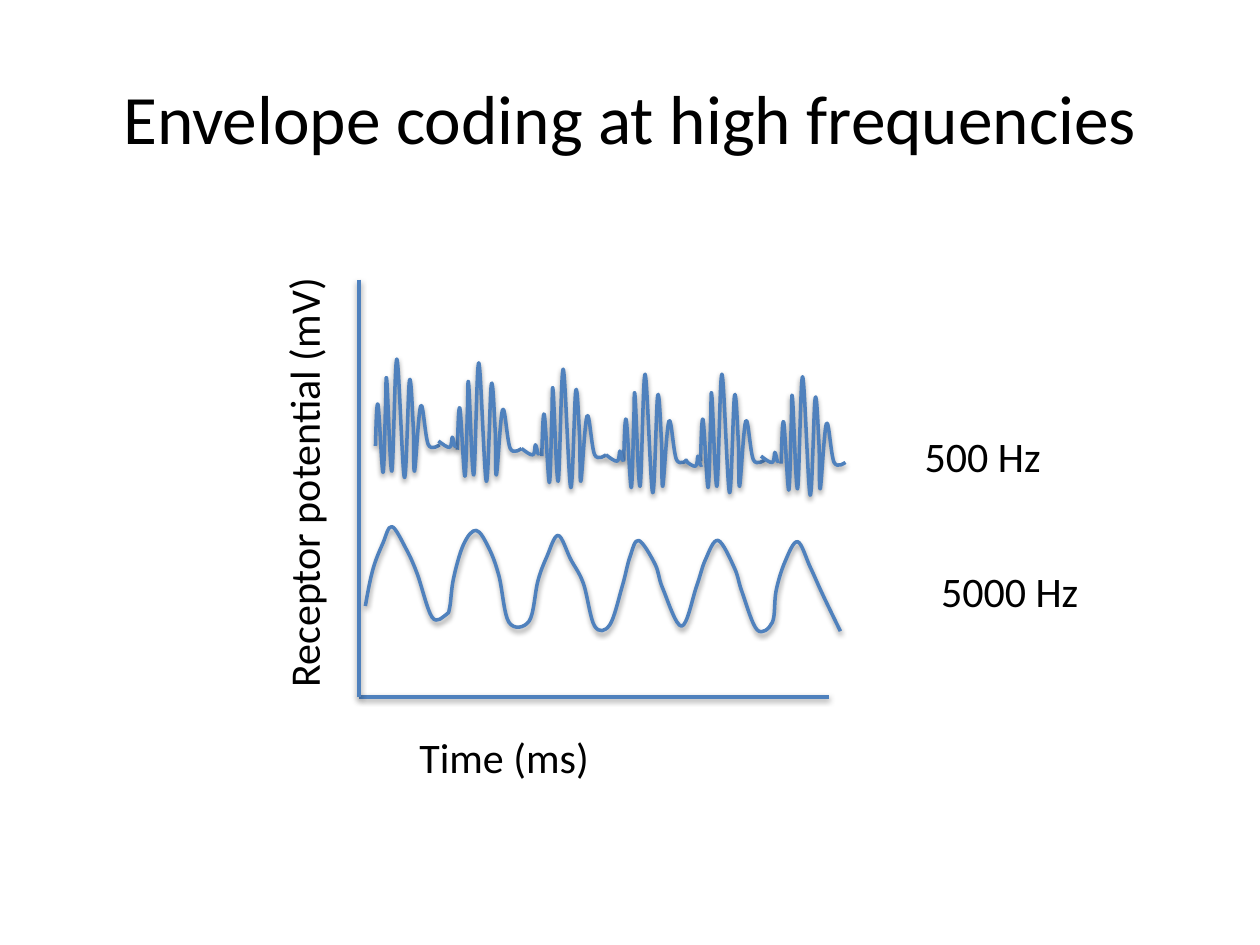
from dataclasses import dataclass

from lxml import etree
from pptx import Presentation
from pptx.dml.color import RGBColor
from pptx.enum.shapes import MSO_CONNECTOR
from pptx.enum.text import MSO_ANCHOR, MSO_AUTO_SIZE, PP_ALIGN
from pptx.oxml.ns import qn
from pptx.util import Inches, Pt

STRAIGHT = MSO_CONNECTOR.STRAIGHT
CENTER, MIDDLE = PP_ALIGN.CENTER, MSO_ANCHOR.MIDDLE
FIT_SHAPE, NO_FIT = MSO_AUTO_SIZE.SHAPE_TO_FIT_TEXT, MSO_AUTO_SIZE.NONE
TITLE_ONLY = 5


@dataclass(frozen=True)
class Theme:
    font: str = "Calibri"
    text: RGBColor = RGBColor(0, 0, 0)
    trace: RGBColor = RGBColor(0x4F, 0x81, 0xBD)
    title_size: float = 39.6
    label_size: float = 24
    line_width: float = 2


THEME = Theme()
TITLE_BOX = (0.5, 0.3, 9, 1.25)
PLOT_BOX = (2.85, 2.22, 3.73, 3.31)

# Curve knots in hundredths of an inch from the start of each curve
BURST = [(0, 0), (2, -33), (6, 21), (8, -32), (9, -52), (13, 20), (17, -69),
         (23, 25), (27, -52), (30, -16), (31, 20), (36, -32), (42, -1), (51, -1)]
RIPPLE = [(0, 0), (9, 5), (11, -3), (13, 4), (14, 4)]
WAVE = [(0, 0), (6, -29), (14, -50), (21, -63), (32, -46), (41, -26), (53, 9),
        (64, 7), (67, 1), (70, -22), (78, -49), (88, -60), (98, -46), (106, -24),
        (114, 13), (130, 12), (137, -20), (144, -39), (153, -56), (163, -37),
        (173, -18), (182, 16), (194, 15), (204, -16), (210, -39), (217, -52),
        (230, -33), (236, -14), (251, 16), (263, -16), (270, -37), (280, -52),
        (293, -30), (299, -11), (311, 19), (323, 13), (326, -12), (333, -35),
        (343, -51), (353, -31), (363, -9), (377, 20)]

# Curve starts in inches from the top left of the plot
TRACES = [
    (BURST, [(0.13, 1.32), (0.78, 1.35), (1.45, 1.40),
             (2.10, 1.44), (2.71, 1.44), (3.35, 1.46)]),
    (RIPPLE, [(0.63, 1.28), (1.29, 1.34), (1.96, 1.39), (2.58, 1.43), (3.19, 1.40)]),
    (WAVE, [(0.05, 2.59)]),
]

# Text, offset from the plot, size, rotation
LABELS = [
    ("Time (ms)", (0.38, 3.54), (1.6, 0.5), 0),
    ("Receptor potential (mV)", (-2.19, 1.34), (3.49, 0.5), 270),
    ("500 Hz", (4.39, 1.15), (1.13, 0.5), 0),
    ("5000 Hz", (4.52, 2.22), (1.35, 0.5), 0),
]


def format_text(p, text, size):
    r = p.add_run()
    r.text = text
    for name, value in {"name": THEME.font, "size": Pt(size)}.items():
        setattr(r.font, name, value)
    r.font.color.rgb = THEME.text


def style_line(sp):
    """Give a curve or an axis its stroke and soft shadow."""
    sp.line.color.rgb = THEME.trace
    sp.line.width = Pt(THEME.line_width)
    effects = etree.SubElement(sp._element.spPr, qn("a:effectLst"))
    shadow = etree.SubElement(effects, qn("a:outerShdw"), blurRad="40000",
                              dist="20000", dir="5400000", rotWithShape="0")
    black = etree.SubElement(shadow, qn("a:srgbClr"), val="000000")
    etree.SubElement(black, qn("a:alpha"), val="38000")


def smooth(sp):
    """Turn the straight segments of a freeform into a spline through its knots."""
    segments = list(sp._element.iter(qn("a:lnTo")))
    knots = [(int(pt.get("x")), int(pt.get("y")))
             for pt in sp._element.iter(qn("a:pt"))]
    last = len(knots) - 1

    def tangent(i):
        return [(b - a) / 6 for a, b in zip(knots[i - 1], knots[i + 1])]

    for i, segment in enumerate(segments):
        start, end = knots[i], knots[i + 1]
        arrive = end
        if i + 1 < last:
            arrive = [k - t for k, t in zip(end, tangent(i + 1))]
        if i:
            leave = [k + t for k, t in zip(start, tangent(i))]
        else:
            leave = [(a + b) / 2 for a, b in zip(start, arrive)]
        curve = etree.Element(qn("a:cubicBezTo"))
        for x, y in (leave, arrive, end):
            etree.SubElement(curve, qn("a:pt"), x=str(round(x)), y=str(round(y)))
        segment.getparent().replace(segment, curve)


def add_curve(s, left, top, knots):
    points = [(Inches(left + x / 100), Inches(top + y / 100)) for x, y in knots]
    builder = s.shapes.build_freeform(*points[0])
    builder.add_line_segments(points[1:], close=False)
    sp = builder.convert_to_shape()
    smooth(sp)
    sp.fill.background()
    style_line(sp)


def add_axes(s, left, top, width, height):
    bottom = top + height
    for ends in ((left, bottom, left + width, bottom), (left, top, left, bottom)):
        style_line(s.shapes.add_connector(STRAIGHT, *map(Inches, ends)))


def add_label(s, box, text, rotation):
    sp = s.shapes.add_textbox(*map(Inches, box))
    sp.rotation = rotation
    tf = sp.text_frame
    for name, value in {"word_wrap": False, "auto_size": FIT_SHAPE}.items():
        setattr(tf, name, value)
    format_text(tf.paragraphs[0], text, THEME.label_size)


def add_plot(s, box):
    left, top = box[:2]
    add_axes(s, *box)
    for knots, starts in TRACES:
        for x, y in starts:
            add_curve(s, left + x, top + y, knots)
    for text, (x, y), size, rotation in LABELS:
        add_label(s, (left + x, top + y, *size), text, rotation)


def add_title(s, box, text):
    sp = s.shapes.title
    for name, value in zip(("left", "top", "width", "height"), box):
        setattr(sp, name, Inches(value))
    tf = sp.text_frame
    for name, value in {"vertical_anchor": MIDDLE, "auto_size": NO_FIT}.items():
        setattr(tf, name, value)
    p = tf.paragraphs[0]
    p.alignment = CENTER
    format_text(p, text, THEME.title_size)


def main():
    prs = Presentation()
    prs.slide_width, prs.slide_height = Inches(10), Inches(7.5)
    s = prs.slides.add_slide(prs.slide_layouts[TITLE_ONLY])
    add_title(s, TITLE_BOX, "Envelope coding at high frequencies")
    add_plot(s, PLOT_BOX)
    prs.save("out.pptx")


if __name__ == "__main__":
    main()
